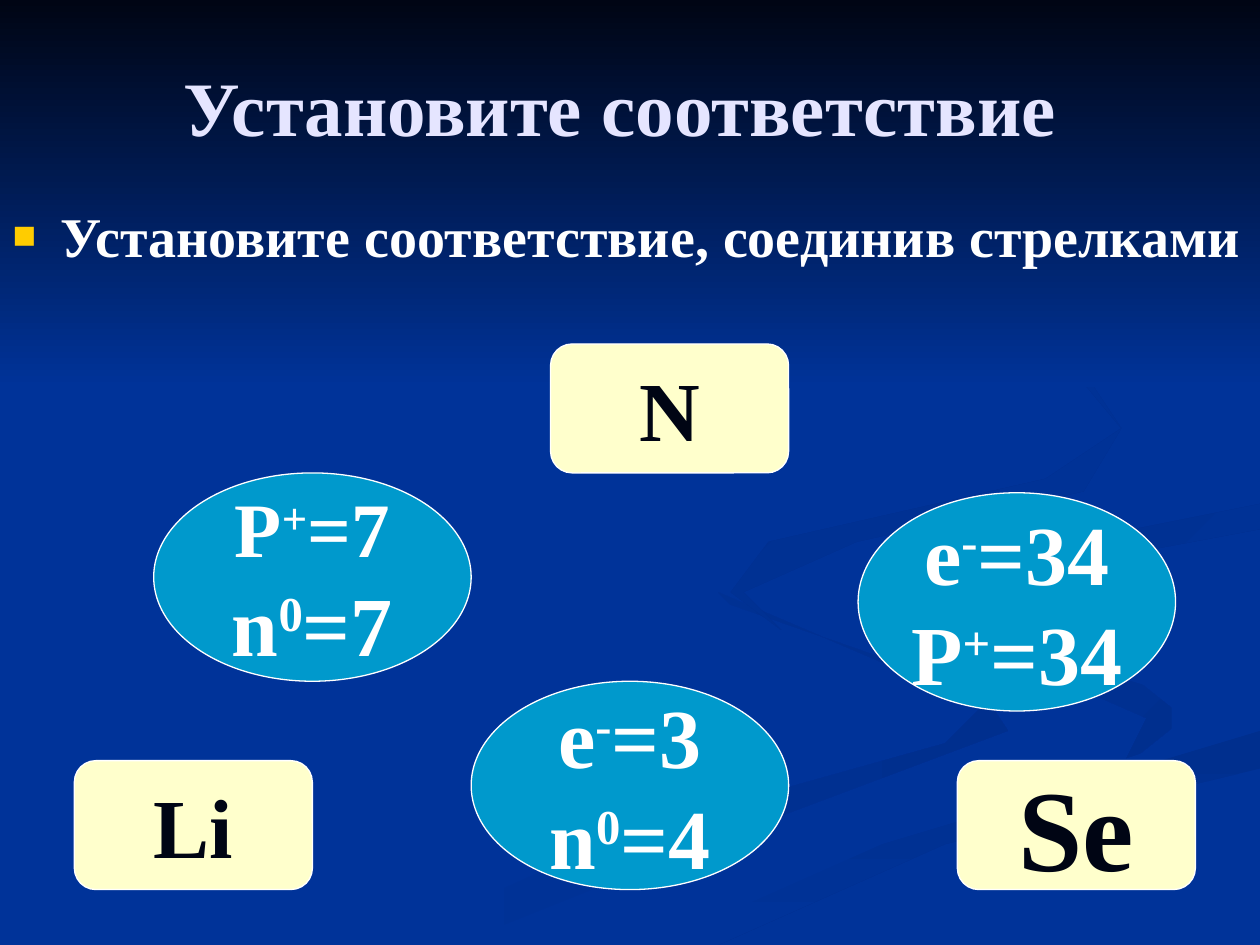
import pptx
import pptx.util
from lxml import etree
from pptx.dml.color import RGBColor
from pptx.enum.shapes import MSO_SHAPE
from pptx.enum.text import MSO_ANCHOR, MSO_AUTO_SIZE, PP_ALIGN
from pptx.oxml.ns import qn

NAVY = RGBColor(0x00, 0x33, 0x99)
NIGHT = RGBColor(0x00, 0x05, 0x14)
SHADE = RGBColor(0x00, 0x2F, 0x8E)
LAVENDER = RGBColor(0xE5, 0xE5, 0xFF)
WHITE = RGBColor(0xFF, 0xFF, 0xFF)
GOLD = RGBColor(0xFF, 0xCC, 0x00)
CYAN = RGBColor(0x00, 0x99, 0xCC)
CREAM = RGBColor(0xFF, 0xFF, 0xCC)

FONT = "Times New Roman"
WIDTH, HEIGHT = pptx.util.Inches(10), pptx.util.Inches(7.5)
CELL = WIDTH / 127  # square grid cell of the matching exercise
GRID_LEFT, GRID_TOP = WIDTH * 0.059, HEIGHT * 0.364

# Each swirl: first colour, last colour, angle, outline in hundredths of the slide width
SWIRLS = [
    (NAVY, SHADE, 0, [(78, 55), (58, 48), (57, 47), (78, 56), (75, 59), (50, 66),
                      (30, 75), (36, 75), (56, 67), (80, 58)]),
    (NAVY, SHADE, 45, [(94, 57), (89, 53), (75, 49), (72, 46), (75, 50), (91, 57),
                       (89, 61)]),
    (SHADE, NAVY, 90, [(50, 75), (57, 75), (75, 67), (100, 61), (100, 58), (70, 67)]),
    (NAVY, NAVY, 0, [(73, 46), (76, 50), (93, 55), (93, 59), (66, 68), (48, 75),
                     (52, 75), (70, 67), (100, 58), (100, 54), (79, 48), (80, 44),
                     (100, 40), (100, 39), (77, 43)]),
    (SHADE, NAVY, 45, [(78, 46), (83, 50), (81, 47), (84, 45), (100, 42), (100, 40),
                       (80, 44)]),
    (SHADE, NAVY, 45, [(68, 43), (86, 39), (89, 34), (84, 28), (76, 23), (85, 28),
                       (89, 34), (83, 38), (61, 43), (58, 47), (62, 50), (59, 47)]),
]

# Label parts are split at "^": every second part is raised
ELEMENTS = [("N", 48, 48, 0), ("Se", 66, 89, 42), ("Li", 48, 0, 42)]
PARTICLES = [
    ([("P^+^=7", 44), ("n^0^=7", 48)], 8, 13, 21),
    ([("e^-^=34", 48), ("P^+^=34", 48)], 79, 15, 22),
    ([("e^-^=3", 48), ("n^0^=4", 48)], 40, 34, 21),
]


def write(paragraph, text, size, color, align=None):
    """Add bold text; the parts between ^ marks become superscript."""
    paragraph.alignment = align
    for index, part in enumerate(text.split("^")):
        run = paragraph.add_run()
        run.text = part
        run.font.name = FONT
        run.font.size = pptx.util.Pt(size)
        run.font.bold = True
        run.font.color.rgb = color
        if index % 2:
            run.font._element.set("baseline", "30000")


def place(shape, left, top, width, height):
    shape.left, shape.top = int(left), int(top)
    shape.width, shape.height = int(width), int(height)


def shade(shape, first, last, angle):
    """Fill with a borderless gradient whose angle runs clockwise."""
    shape.shadow.inherit = False
    shape.line.fill.background()
    shape.fill.gradient()
    shape.fill.gradient_angle = -angle % 360
    for stop, color in zip(shape.fill.gradient_stops, (first, last)):
        stop.color.rgb = color


def add_backdrop(slide):
    slide.background.fill.solid()
    slide.background.fill.fore_color.rgb = NAVY
    backdrop = slide.shapes.add_group_shape()
    for first, last, angle, outline in SWIRLS:
        builder = backdrop.shapes.build_freeform(*outline[0], scale=WIDTH / 100)
        builder.add_line_segments(outline[1:], close=True)
        shade(builder.convert_to_shape(), first, last, angle)
    sky = backdrop.shapes.add_shape(MSO_SHAPE.RECTANGLE, 0, 0, WIDTH, int(HEIGHT * 0.41))
    shade(sky, NIGHT, NAVY, 90)
    # Behind the placeholders
    backdrop._element.getparent().insert(2, backdrop._element)


def add_heading(title):
    place(title, WIDTH * 0.05, HEIGHT * 0.028, WIDTH * 0.9, HEIGHT * 0.167)
    frame = title.text_frame
    frame.auto_size = MSO_AUTO_SIZE.NONE
    frame.vertical_anchor = MSO_ANCHOR.MIDDLE
    write(frame.paragraphs[0], "Установите соответствие ", 44, LAVENDER, PP_ALIGN.CENTER)


def add_task(body):
    place(body, 0, HEIGHT * 0.207, WIDTH, HEIGHT * 0.125)
    body.text_frame.auto_size = MSO_AUTO_SIZE.NONE
    task = body.text_frame.paragraphs[0]
    write(task, "Установите соответствие, соединив стрелками", 32, WHITE)
    properties = task._p.get_or_add_pPr()
    indent = pptx.util.Inches(0.38)
    properties.set("marL", str(indent))
    properties.set("indent", str(-indent))
    bullet_color = etree.SubElement(properties, qn("a:buClr"))
    etree.SubElement(bullet_color, qn("a:srgbClr"), val=str(GOLD))
    etree.SubElement(properties, qn("a:buSzPct"), val="70000")
    etree.SubElement(properties, qn("a:buFont"), typeface=FONT)
    etree.SubElement(properties, qn("a:buChar"), char="■")


def add_card(slide, outline, box, lines, fill, color):
    """Add a labelled card; box is column, row, columns and rows of the grid."""
    column, row, columns, rows = box
    card = slide.shapes.add_shape(outline, 0, 0, 0, 0)
    place(card, GRID_LEFT + column * CELL, GRID_TOP + row * CELL, columns * CELL, rows * CELL)
    card.shadow.inherit = False
    card.fill.solid()
    card.fill.fore_color.rgb = fill
    card.line.color.rgb = WHITE
    card.line.width = pptx.util.Pt(0.75)
    frame = card.text_frame
    frame.word_wrap = False
    frame.vertical_anchor = MSO_ANCHOR.MIDDLE
    for index, (text, size) in enumerate(lines):
        paragraph = frame.add_paragraph() if index else frame.paragraphs[0]
        write(paragraph, text, size, color, PP_ALIGN.CENTER)


def add_matching(slide):
    for lines, column, row, rows in PARTICLES:
        add_card(slide, MSO_SHAPE.OVAL, (column, row, 32, rows), lines, CYAN, WHITE)
    for symbol, size, column, row in ELEMENTS:
        add_card(slide, MSO_SHAPE.ROUNDED_RECTANGLE, (column, row, 24, 13),
                 [(symbol, size)], CREAM, NIGHT)


def main():
    deck = pptx.Presentation()
    deck.slide_width, deck.slide_height = WIDTH, HEIGHT
    slide = deck.slides.add_slide(deck.slide_layouts[1])
    add_backdrop(slide)
    add_heading(slide.shapes.title)
    add_task(slide.placeholders[1])
    add_matching(slide)
    deck.save("out.pptx")


if __name__ == "__main__":
    main()
